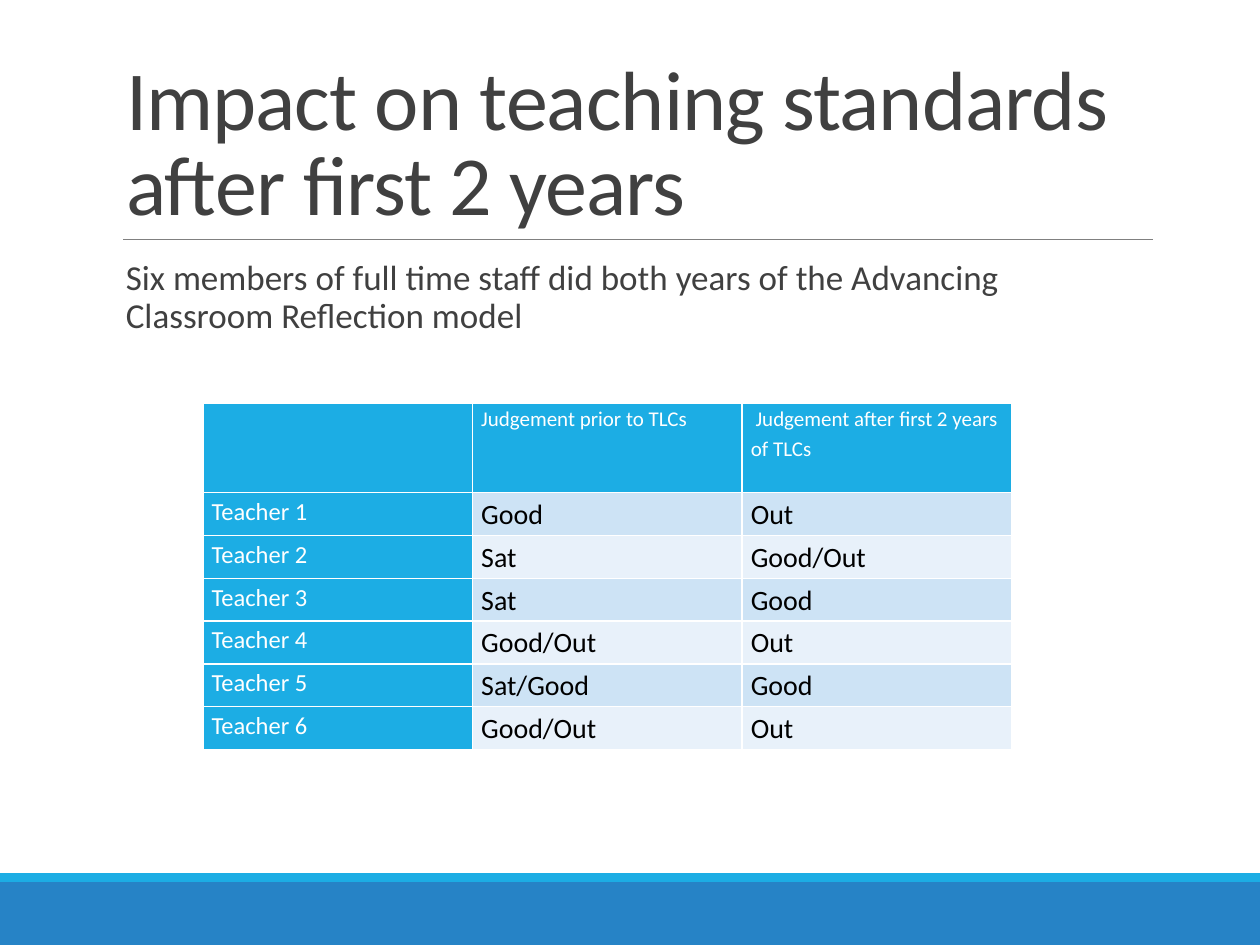
from lxml import etree
from pptx import Presentation
from pptx.dml.color import RGBColor
from pptx.enum.shapes import MSO_CONNECTOR, MSO_SHAPE
from pptx.enum.text import MSO_ANCHOR, MSO_AUTO_SIZE, PP_ALIGN
from pptx.oxml.ns import qn
from pptx.util import Inches, Pt

RECTANGLE = MSO_SHAPE.RECTANGLE
STRAIGHT = MSO_CONNECTOR.STRAIGHT
BOTTOM = MSO_ANCHOR.BOTTOM
LEFT = PP_ALIGN.LEFT
NO_AUTOFIT = MSO_AUTO_SIZE.NONE

FONT = "Calibri"
ACCENT, BLUE, GREY, DARK = "1CADE4", "2683C6", "808080", "404040"
WHITE, BLACK = "FFFFFF", "000000"
BANDS = ["CDE3F5", "E8F1FA"]


def color(value):
    return RGBColor.from_string(value)


def format_paragraph(paragraph, size, font_color, line_spacing):
    paragraph.font.name = FONT
    paragraph.font.size = Pt(size)
    paragraph.font.bold = False
    paragraph.font.color.rgb = color(font_color)
    paragraph.line_spacing = line_spacing
    paragraph.alignment = LEFT


presentation = Presentation()
presentation.slide_width = Inches(10)
presentation.slide_height = Inches(7.5)
slide = presentation.slides.add_slide(presentation.slide_layouts[5])

# Footer bands and the rule under the title
for top, height, fill in [(7, 0.5, BLUE), (6.93, 0.07, ACCENT)]:
    band = slide.shapes.add_shape(
        RECTANGLE, 0, Inches(top), Inches(10), Inches(height))
    band.shadow.inherit = False
    band.fill.solid()
    band.fill.fore_color.rgb = color(fill)
    band.line.fill.background()

rule = slide.shapes.add_connector(
    STRAIGHT, Inches(0.98), Inches(1.9), Inches(9.15), Inches(1.9))
rule.line.color.rgb = color(GREY)
rule.line.width = Pt(0.5)
etree.SubElement(rule.element.spPr, qn("a:effectLst"))

# Title
title = slide.shapes.title
title.left, title.top = Inches(0.9), Inches(0.31)
title.width, title.height = Inches(8.25), Inches(1.59)
title.text_frame.text = "Impact on teaching standards after first 2 years"
title.text_frame.vertical_anchor = BOTTOM
title.text_frame.auto_size = NO_AUTOFIT
title_paragraph = title.text_frame.paragraphs[0]
format_paragraph(title_paragraph, 48, DARK, 0.85)
title_paragraph.runs[0].font._element.set("spc", "-50")

# Introduction
introduction = slide.shapes.add_textbox(
    Inches(0.9), Inches(2.02), Inches(8.25), Inches(4.4))
frame = introduction.text_frame
frame.word_wrap = True
frame.margin_left = Inches(0.1)
frame.margin_right = 0
frame.text = ("Six members of full time staff did both years of the "
              "Advancing Classroom Reflection model")
paragraph = frame.paragraphs[0]
format_paragraph(paragraph, 20, DARK, 0.9)
paragraph.space_before = Pt(12)
paragraph.space_after = Pt(2)

# Judgements table
rows = [
    ("", "Judgement prior to TLCs", " Judgement after first 2 years of TLCs"),
    ("Teacher 1", "Good", "Out"),
    ("Teacher 2", "Sat", "Good/Out"),
    ("Teacher 3", "Sat", "Good"),
    ("Teacher 4", "Good/Out", "Out"),
    ("Teacher 5", "Sat/Good", "Good"),
    ("Teacher 6", "Good/Out", "Out"),
]
table = slide.shapes.add_table(
    len(rows), 3, Inches(1.61), Inches(3.2), Inches(6.42), Inches(2.75)).table
for column in table.columns:
    column.width = Inches(2.14)

for row_index, row in enumerate(rows):
    is_header = row_index == 0
    table.rows[row_index].height = Inches(0.71 if is_header else 0.34)
    for column_index, text in enumerate(row):
        if is_header:
            size, font_color, fill = 12, WHITE, ACCENT
        elif column_index == 0:
            size, font_color, fill = 14, WHITE, ACCENT
        else:
            size, font_color, fill = 16, BLACK, BANDS[(row_index - 1) % 2]
        cell = table.cell(row_index, column_index)
        cell.text = text
        cell.margin_left = cell.margin_right = Inches(0.07)
        cell.margin_top = cell.margin_bottom = 0
        format_paragraph(cell.text_frame.paragraphs[0], size, font_color, 1.15)

        cell_properties = cell._tc.get_or_add_tcPr()
        for side in ("lnL", "lnR", "lnT", "lnB"):
            border = etree.SubElement(
                cell_properties, qn("a:" + side), w=str(Pt(1)))
            border_fill = etree.SubElement(border, qn("a:solidFill"))
            etree.SubElement(border_fill, qn("a:srgbClr"), val=WHITE)
        cell.fill.solid()
        cell.fill.fore_color.rgb = color(fill)

presentation.save("out.pptx")
